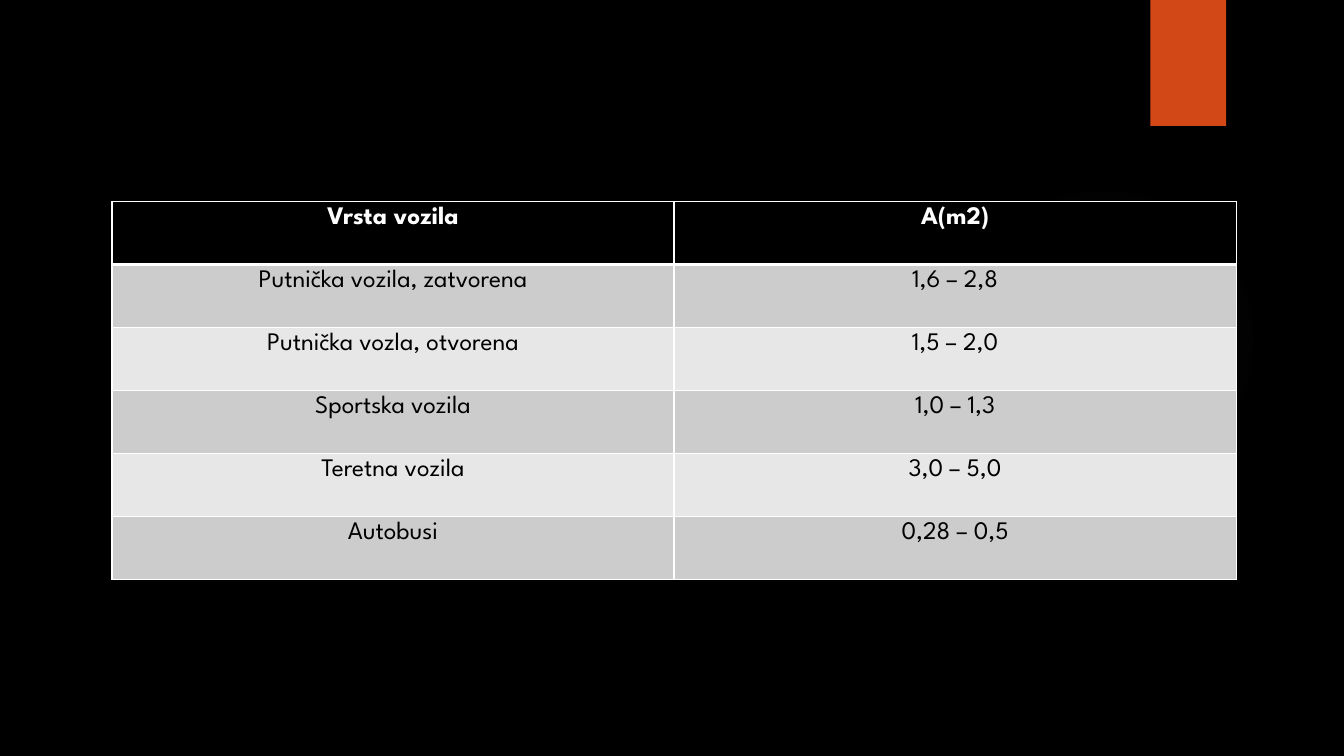
"""Build a slide with a table of vehicle types and their frontal areas."""
import dataclasses

import lxml.etree
import pptx
import pptx.dml.color
import pptx.enum.shapes
import pptx.enum.text
import pptx.oxml
import pptx.oxml.ns
import pptx.util

COLORS = {"black": "000000", "white": "FFFFFF", "orange": "D34817",
          "glow": "A6A1A1", "dark": "CCCCCC", "light": "E7E7E7"}
FONT = "League Spartan"
WIDTH, HEIGHT = pptx.util.Inches(13.33), pptx.util.Inches(7.5)
GLOW_STOPS = ((0, 7), (36, 6), (69, 0))
ROWS = (
    ("Vrsta vozila", "A(m2)"),
    ("Putnička vozila, zatvorena", "1,6 – 2,8"),
    ("Putnička vozla, otvorena", "1,5 – 2,0"),
    ("Sportska vozila", "1,0 – 1,3"),
    ("Teretna vozila", "3,0 – 5,0"),
    ("Autobusi", "0,28 – 0,5"),
)


@dataclasses.dataclass(frozen=True)
class Area:
    """A rectangle in percent of the slide's width and height."""
    left: float
    top: float
    width: float
    height: float

    def emu(self) -> tuple[int, int, int, int]:
        """Return the rectangle in slide units."""
        return (round(WIDTH * self.left / 100), round(HEIGHT * self.top / 100),
                round(WIDTH * self.width / 100), round(HEIGHT * self.height / 100))


@dataclasses.dataclass(frozen=True)
class Decoration:
    """A plain background shape."""
    kind: pptx.enum.shapes.MSO_SHAPE
    area: Area
    color: str
    glow: bool = False


DECORATIONS = (
    Decoration(pptx.enum.shapes.MSO_SHAPE.OVAL, Area(70.59, 24.4, 23.11, 41.07), "glow", True),
    Decoration(pptx.enum.shapes.MSO_SHAPE.RECTANGLE, Area(85.6, 0, 5.63, 16.67), "orange"),
)
TABLE_AREA = Area(8.33, 26.67, 83.65, 50)


def rgb(name: str) -> pptx.dml.color.RGBColor:
    """Return a named colour."""
    return pptx.dml.color.RGBColor.from_string(COLORS[name])


def paint(fill, color: str) -> None:
    """Fill with one solid colour."""
    fill.solid()
    fill.fore_color.rgb = rgb(color)


def add_glow(sp, color: str) -> None:
    """Replace the fill with a fading radial gradient."""
    stops = "".join(
        f'<a:gs pos="{pos * 1000}"><a:srgbClr val="{COLORS[color]}">'
        f'<a:alpha val="{alpha * 1000}"/></a:srgbClr></a:gs>' for pos, alpha in GLOW_STOPS)
    grad = pptx.oxml.parse_xml(
        f'<a:gradFill {pptx.oxml.ns.nsdecls("a")}><a:gsLst>{stops}</a:gsLst>'
        '<a:path path="circle"><a:fillToRect l="50000" t="50000" r="50000" b="50000"/>'
        '</a:path></a:gradFill>')
    solid = sp._element.spPr.find(pptx.oxml.ns.qn("a:solidFill"))
    solid.getparent().replace(solid, grad)


def add_decoration(s, item: Decoration) -> None:
    """Draw one background shape."""
    sp = s.shapes.add_shape(item.kind, *item.area.emu())
    sp.shadow.inherit = False
    sp.line.fill.background()
    paint(sp.fill, item.color)
    if item.glow:
        add_glow(sp, item.color)


def add_borders(cell, widths: dict[str, int]) -> None:
    """Draw white borders of the given point widths."""
    tc_pr = cell._tc.get_or_add_tcPr()
    for side, width in widths.items():
        ln = lxml.etree.SubElement(tc_pr, pptx.oxml.ns.qn(f"a:ln{side}"),
                                   w=str(pptx.util.Pt(width)))
        fill = lxml.etree.SubElement(ln, pptx.oxml.ns.qn("a:solidFill"))
        lxml.etree.SubElement(fill, pptx.oxml.ns.qn("a:srgbClr"), val=COLORS["white"])


def format_cell(cell, text: str, row: int) -> None:
    """Write and format one table cell."""
    header = row == 0
    add_borders(cell, {"L": 1, "R": 1, "T": 3 if row == 1 else 1, "B": 3 if header else 1})
    paint(cell.fill, "black" if header else "dark" if row % 2 else "light")
    p = cell.text_frame.paragraphs[0]
    p.alignment = pptx.enum.text.PP_ALIGN.CENTER
    r = p.add_run()
    r.text = text
    for name, value in {"name": FONT, "size": pptx.util.Pt(18), "bold": header}.items():
        setattr(r.font, name, value)
    r.font.color.rgb = rgb("white" if header else "black")


def add_vehicle_table(s) -> None:
    """Draw the table with equal rows and columns."""
    table = s.shapes.add_table(len(ROWS), len(ROWS[0]), *TABLE_AREA.emu()).table
    for i, texts in enumerate(ROWS):
        for j, text in enumerate(texts):
            format_cell(table.cell(i, j), text, i)


def main() -> None:
    """Build and save the presentation."""
    prs = pptx.Presentation()
    prs.slide_width, prs.slide_height = WIDTH, HEIGHT
    s = prs.slides.add_slide(prs.slide_layouts[6])
    paint(s.background.fill, "black")
    for item in DECORATIONS:
        add_decoration(s, item)
    add_vehicle_table(s)
    prs.save("out.pptx")


if __name__ == "__main__":
    main()
